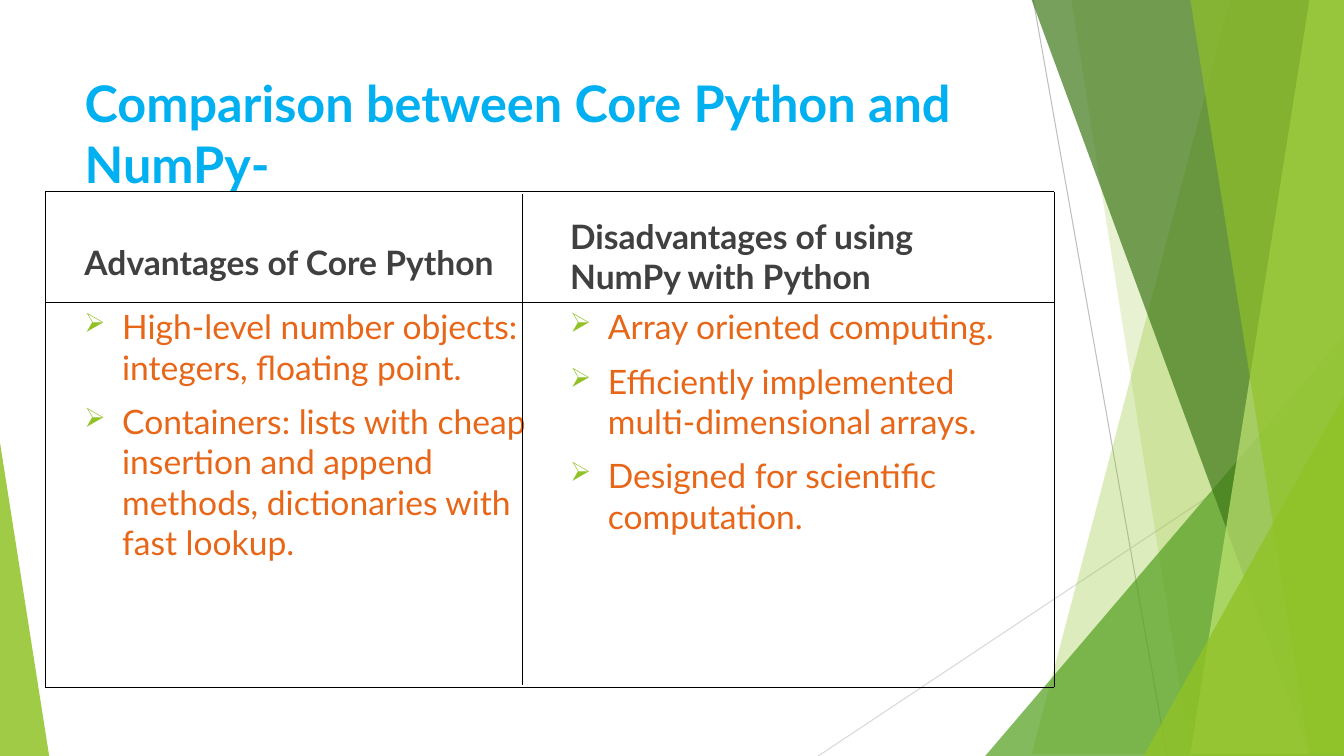
from collections import namedtuple

from lxml.etree import SubElement
from pptx import Presentation
from pptx.dml.color import RGBColor
from pptx.enum.shapes import MSO_CONNECTOR as Connector, MSO_SHAPE as Shape
from pptx.enum.text import MSO_ANCHOR as Anchor, MSO_AUTO_SIZE as AutoSize, PP_ALIGN as Align
from pptx.oxml.ns import qn
from pptx.util import Cm, Pt

# Boxes are in centimetres
Box = namedtuple("Box", "left top width height")

BLACK = RGBColor(0x00, 0x00, 0x00)
SKY = RGBColor(0x00, 0xB0, 0xF0)
CHARCOAL = RGBColor(0x40, 0x40, 0x40)
ORANGE = RGBColor(0xE7, 0x66, 0x18)
LEAF = RGBColor(0x90, 0xC2, 0x26)
GRASS = RGBColor(0x54, 0xA0, 0x21)
FOREST = RGBColor(0x3F, 0x78, 0x19)
LIME = RGBColor(0xC0, 0xE4, 0x74)
SILVER = RGBColor(0xBF, 0xBF, 0xBF)
PALE = RGBColor(0xD9, 0xD9, 0xD9)

FONT = "Lato"
SLIDE = Box(0, 0, 33.87, 19.05)
TITLE = Box(1.88, 1.7, 23.88, 3.66)
FRAME = Box(1.14, 4.83, 25.43, 12.49)
HEADER_DEPTH = 2.79
DIVIDER_OFFSET = 12.02
DIVIDER_GAP = 0.07

# Heading, left edge, heading top, points
COLUMNS = [
    ("Advantages of Core Python", 1.88, 5.64, [
        "High-level number objects: integers, floating point.",
        "Containers: lists with cheap insertion and append methods, "
        "dictionaries with fast lookup.",
    ]),
    ("Disadvantages of using NumPy with Python", 14.12, 5.99, [
        "Array oriented computing.",
        "Efficiently implemented multi-dimensional arrays.",
        "Designed for scientific computation.",
    ]),
]


def draw_line(slide, start, end, color, weight):
    line = slide.shapes.add_connector(
        Connector.STRAIGHT, *(Cm(value) for value in (*start, *end)))
    line.line.color.rgb = color
    line.line.width = Pt(weight)
    SubElement(line._element.spPr, qn("a:effectLst"))


def paint(shape, color, opacity):
    """Give a borderless fill with the opacity in percent."""
    shape.shadow.inherit = False
    shape.line.fill.background()
    shape.fill.solid()
    shape.fill.fore_color.rgb = color
    tint = shape._element.spPr.find(qn("a:solidFill"))[0]
    SubElement(tint, qn("a:alpha"), val=str(opacity * 1000))


def draw_facet(slide, box, top_x, bottom_x, color, opacity):
    """Fill from a slanted left edge to the right side of the box."""
    right, bottom = box.left + box.width, box.top + box.height
    outline = slide.shapes.build_freeform(box.left + top_x, box.top, scale=Cm(1))
    outline.add_line_segments(
        [(right, box.top), (right, bottom), (box.left + bottom_x, bottom)])
    paint(outline.convert_to_shape(), color, opacity)


def draw_corner(slide, box, width, height, apex, color, opacity):
    """Put a triangle in a bottom corner: apex 0 is left, 1 is right."""
    left = box.left + apex * (box.width - width)
    top = box.top + box.height - height
    corner = slide.shapes.add_shape(
        Shape.ISOSCELES_TRIANGLE, Cm(left), Cm(top), Cm(width), Cm(height))
    corner.adjustments[0] = apex
    paint(corner, color, opacity)


def draw_backdrop(slide, box):
    right, bottom = box.left + box.width, box.top + box.height
    draw_line(slide, (box.left + 26.04, box.top), (box.left + 29.41, bottom), SILVER, 0.75)
    draw_line(slide, (right, box.top + 10.24), (box.left + 20.62, bottom), PALE, 0.75)
    draw_facet(slide, box, 31.19, 25.5, LEAF, 30)
    draw_facet(slide, box, 26.67, 30.05, LEAF, 20)
    draw_corner(slide, box, 9.04, 10.59, 1, GRASS, 72)
    draw_facet(slide, box, 25.93, 32.79, FOREST, 70)
    draw_facet(slide, box, 33.1, 30.28, LIME, 70)
    draw_facet(slide, box, 30.38, 33.48, LEAF, 65)
    draw_corner(slide, box, 5.05, 9.07, 1, LEAF, 80)
    draw_corner(slide, box, 1.24, 7.9, 0, LEAF, 85)


def style_font(paragraph, size, color, bold=False):
    font = paragraph.font
    font.name, font.size, font.bold = FONT, Pt(size), bold
    font.color.rgb = color


def write_title(slide, box):
    title = slide.shapes.title
    title.left, title.top, title.width, title.height = (Cm(value) for value in box)
    frame = title.text_frame
    frame.text = "Comparison between Core Python and NumPy-"
    frame.vertical_anchor = Anchor.TOP
    frame.auto_size = AutoSize.NONE
    frame.paragraphs[0].alignment = Align.LEFT
    style_font(frame.paragraphs[0], 36, SKY, True)


def add_bullet(paragraph):
    properties = paragraph._p.get_or_add_pPr()
    properties.set("marL", str(Cm(0.95)))
    properties.set("indent", str(-Cm(0.95)))
    color = SubElement(properties, qn("a:buClr"))
    SubElement(color, qn("a:srgbClr"), val=str(LEAF))
    SubElement(properties, qn("a:buSzPct"), val="80000")
    SubElement(properties, qn("a:buChar"), char="➢")


def write_text(slide, box, lines, color, anchor=Anchor.TOP, bold=False, bulleted=False):
    frame = slide.shapes.add_textbox(*(Cm(value) for value in box)).text_frame
    frame.word_wrap = True
    frame.vertical_anchor = anchor
    frame.text = "\n".join(lines)
    for paragraph in frame.paragraphs:
        paragraph.space_before = Pt(10)
        style_font(paragraph, 24, color, bold)
        if bulleted:
            add_bullet(paragraph)


def write_column(slide, box, heading, heading_top, points):
    write_text(slide, Box(box.left, heading_top, box.width, 1.6), [heading],
               CHARCOAL, Anchor.BOTTOM, bold=True)
    write_text(slide, box, points, ORANGE, bulleted=True)


def draw_frame(slide, box):
    right, bottom = box.left + box.width, box.top + box.height
    divider = box.left + DIVIDER_OFFSET
    draw_line(slide, (divider, box.top + DIVIDER_GAP), (divider, bottom - DIVIDER_GAP), BLACK, 1)
    for x in (box.left, right):
        draw_line(slide, (x, box.top), (x, bottom), BLACK, 1)
    for y in (bottom, box.top, box.top + HEADER_DEPTH):
        draw_line(slide, (box.left, y), (right, y), BLACK, 1)


def main():
    deck = Presentation()
    deck.slide_width, deck.slide_height = Cm(SLIDE.width), Cm(SLIDE.height)
    slide = deck.slides.add_slide(deck.slide_layouts[5])
    draw_backdrop(slide, SLIDE)
    write_title(slide, TITLE)
    for heading, left, heading_top, points in COLUMNS:
        write_column(slide, Box(left, 7.59, 11.63, 9.17), heading, heading_top, points)
    draw_frame(slide, FRAME)
    deck.save("out.pptx")


if __name__ == "__main__":
    main()
